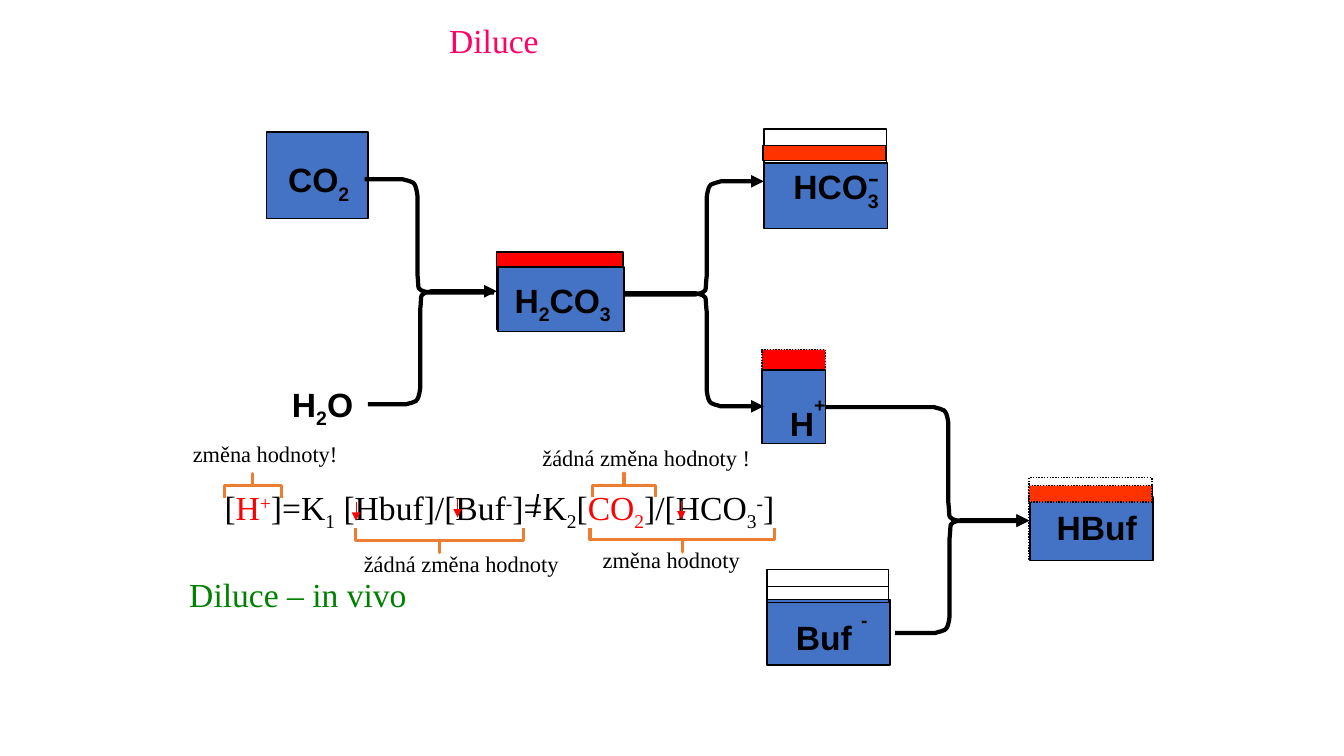
from dataclasses import dataclass

from lxml import etree
from pptx import Presentation
from pptx.dml.color import RGBColor
from pptx.enum.dml import MSO_LINE
from pptx.enum.shapes import MSO_CONNECTOR, MSO_SHAPE
from pptx.enum.text import MSO_AUTO_SIZE, PP_ALIGN
from pptx.oxml.ns import qn
from pptx.util import Cm, Pt

RECTANGLE = MSO_SHAPE.RECTANGLE
BRACE = MSO_SHAPE.RIGHT_BRACE
STRAIGHT = MSO_CONNECTOR.STRAIGHT
DOTTED = MSO_LINE.ROUND_DOT
LEFT, CENTER = PP_ALIGN.LEFT, PP_ALIGN.CENTER
SUB, SUPER, HIGH = -25, 30, 70


@dataclass(frozen=True)
class Theme:
    black: str = "000000"
    blue: str = "4472C4"
    red: str = "FF0000"
    orange: str = "FF3300"
    brace: str = "ED7D31"
    pink: str = "FF0066"
    green: str = "008000"
    label_font: str = "Arial"
    text_font: str = "Times New Roman"
    large: int = 24
    small: int = 16


THEME = Theme()

# left, top, width, height, fill, dotted
LEVELS = [
    (12.52, 6.35, 3.18, 1.96, THEME.red, False),
    (6.71, 3.33, 2.57, 2.18, THEME.blue, False),
    (25.93, 12.04, 3.1, 2.06, None, True),
    (19.2, 8.81, 1.6, 2.36, THEME.red, True),
    (19.25, 3.25, 3.1, 1.98, None, False),
    (19.2, 9.32, 1.6, 1.85, THEME.blue, False),
    (19.33, 14.35, 3.07, 2.39, None, False),
    (25.96, 12.52, 3.1, 1.6, THEME.blue, False),
    (19.33, 15.11, 3.1, 1.65, THEME.blue, False),
    (19.25, 4.11, 3.12, 1.65, THEME.blue, False),
    (12.55, 6.73, 3.18, 1.63, THEME.blue, False),
    (19.23, 3.66, 3.1, 0.38, THEME.orange, False),
    (25.93, 12.24, 3.1, 0.41, THEME.orange, True),
    (19.33, 14.78, 3.07, 0.41, None, False),
]

# junction, trunk x, far end, arrowhead element
BRANCHES = [
    ((12.45, 7.37), 10.52, (9.19, 4.52), None),
    ((12.52, 7.34), 10.59, (9.27, 10.19), "a:headEnd"),
    ((25.93, 13.13), 23.9, (20.8, 10.26), "a:headEnd"),
    ((25.93, 13.11), 23.93, (22.56, 15.95), "a:headEnd"),
    ((15.72, 7.42), 17.81, (19.25, 4.57), "a:tailEnd"),
    ((15.72, 7.39), 17.81, (19.25, 10.24), "a:tailEnd"),
]

# left, top, width, wrap, runs of (text, baseline)
SPECIES = [
    (6.99, 3.89, 2.08, False, [("CO",), ("2", SUB)]),
    (7.09, 9.55, 2.08, False, [("H",), ("2", SUB), ("O",)]),
    (12.67, 6.93, 3.02, True, [("H",), ("2", SUB), ("CO",), ("3", SUB)]),
    (19.71, 4.06, 2.72, False, [("HCO",), ("3", SUB)]),
    (19.63, 9.78, 1.45, True, [("H",), ("+", HIGH)]),
    (19.79, 15.19, 2.34, False, [("Buf ",), ("-", HIGH)]),
    (26.37, 12.65, 2.54, False, [("HBuf",)]),
]

# text, baseline, colour
FORMULA = [
    ("[",), ("H", 0, THEME.red), ("+", SUPER, THEME.red), ("]=K",), ("1", SUB),
    (" [Hbuf]/[Buf",), ("-", SUPER), ("]=K",), ("2", SUB), ("[",),
    ("CO", 0, THEME.red), ("2", SUB, THEME.red), ("]/[HCO",), ("3", SUB),
    ("-", SUPER), ("]",),
]

# left, top, width, wrap, text
NOTES = [
    (8.92, 13.74, 5.49, False, "žádná změna hodnoty"),
    (14.94, 13.64, 4.17, False, "změna hodnoty"),
    (4.47, 10.97, 5.26, True, " změna hodnoty!"),
    (13.28, 11.07, 6.25, True, " žádná změna hodnoty !"),
]

# left, top, height before rotation, rotation
BRACES = [
    (10.77, 11.51, 4.22, 90),
    (16.89, 11.28, 4.65, 90),
    (6.07, 11.53, 1.42, 270),
    (15.42, 11.43, 1.6, 270),
]

DOWN_ARROWS = [(8.97, 12.65), (11.53, 12.57), (17.17, 12.62)]


def style_line(shape, color, width, arrow=None):
    shape.line.color.rgb = RGBColor.from_string(color)
    shape.line.width = Pt(width)
    if arrow:
        line = shape.element.spPr.find(qn("a:ln"))
        etree.SubElement(line, qn(arrow)).set("type", "triangle")


def add_level(slide, left, top, width, height, fill, dotted):
    shape = slide.shapes.add_shape(RECTANGLE, Cm(left), Cm(top), Cm(width), Cm(height))
    shape.shadow.inherit = False
    if fill:
        shape.fill.solid()
        shape.fill.fore_color.rgb = RGBColor.from_string(fill)
    else:
        shape.fill.background()
    style_line(shape, THEME.black, 1)
    if dotted:
        shape.line.dash_style = DOTTED


def add_branch(slide, junction, trunk, far, arrow):
    """Draw a line from junction to far that turns into and out of a vertical trunk."""
    (x0, y0), (x1, y1) = junction, far
    side = 1 if x0 > trunk else -1
    down = 1 if y1 > y0 else -1
    points = [
        (trunk + 0.28 * side, y0),
        (trunk - 0.05 * side, y0 + 0.08 * down),
        (trunk + 0.05 * side, y0 + 0.05 * down),
        (trunk, y0 + 0.46 * down),
        (trunk, y1 - 0.41 * down),
        (trunk - 0.05 * side, y1),
        (trunk - 0.13 * side, y1 - 0.08 * down),
        (trunk - 0.36 * side, y1),
        far,
    ]
    builder = slide.shapes.build_freeform(Cm(x0), Cm(y0))
    builder.add_line_segments([(Cm(x), Cm(y)) for x, y in points], close=False)
    shape = builder.convert_to_shape()
    segments = list(shape.element.iter(qn("a:lnTo")))
    for first in (1, 5):
        curve = etree.Element(qn("a:cubicBezTo"))
        segments[first].addprevious(curve)
        for segment in segments[first:first + 3]:
            curve.append(segment[0])
            segment.getparent().remove(segment)
    shape.shadow.inherit = False
    shape.fill.background()
    style_line(shape, THEME.black, 3, arrow)


def add_line(slide, start, end, color, width, arrow=None):
    connector = slide.shapes.add_connector(STRAIGHT, *map(Cm, start + end))
    style_line(connector, color, width, arrow)
    etree.SubElement(connector.element.spPr, qn("a:effectLst"))


def add_brace(slide, left, top, height, rotation):
    shape = slide.shapes.add_shape(BRACE, Cm(left), Cm(top), Cm(0.61), Cm(height))
    shape.adjustments[0] = 0
    shape.adjustments[1] = 0.5
    shape.rotation = rotation
    shape.shadow.inherit = False
    shape.fill.background()
    style_line(shape, THEME.brace, 2.25)


def add_text(slide, left, top, width, runs, height=1.29, wrap=False, size=THEME.large,
             font=THEME.text_font, color=THEME.black, bold=False, align=LEFT):
    """Add a text box; each run is (text, baseline percent, colour), the last two optional."""
    box = slide.shapes.add_textbox(Cm(left), Cm(top), Cm(width), Cm(height))
    frame = box.text_frame
    frame.word_wrap = wrap
    frame.auto_size = MSO_AUTO_SIZE.SHAPE_TO_FIT_TEXT
    paragraph = frame.paragraphs[0]
    paragraph.alignment = align
    for text, baseline, run_color in ((*run, 0, color)[:3] if len(run) == 1
                                      else (*run, color)[:3] for run in runs):
        run = paragraph.add_run()
        run.text = text
        run.font.name = font
        run.font.size = Pt(size)
        run.font.bold = bold
        run.font.color.rgb = RGBColor.from_string(run_color)
        if baseline:
            run.font._element.set("baseline", str(baseline * 1000))


def main():
    presentation = Presentation()
    presentation.slide_width, presentation.slide_height = Cm(33.87), Cm(19.05)
    slide = presentation.slides.add_slide(presentation.slide_layouts[6])

    for level in LEVELS:
        add_level(slide, *level)
    for branch in BRANCHES:
        add_branch(slide, *branch)
    for left, top, width, wrap, runs in SPECIES:
        add_text(slide, left, top, width, runs, wrap=wrap, font=THEME.label_font,
                 bold=True, align=CENTER)
    add_text(slide, 21.62, 3.78, 0.79, [("-",)], align=CENTER)

    add_text(slide, 11.07, 0.38, 2.79, [("Diluce",)], color=THEME.pink)
    add_text(slide, 5.41, 12.14, 14.99, FORMULA)
    add_text(slide, 4.52, 14.33, 6.05, [("Diluce – in vivo",)], color=THEME.green)
    for x, y in DOWN_ARROWS:
        add_line(slide, (x, y), (x, y + 0.47), THEME.red, 0.5, "a:tailEnd")
    add_line(slide, (13.56, 12.45), (13.46, 13.03), THEME.black, 1.5)
    for left, top, width, wrap, text in NOTES:
        add_text(slide, left, top, width, [(text,)], height=0.94, wrap=wrap, size=THEME.small)
    for brace in BRACES:
        add_brace(slide, *brace)

    presentation.save("out.pptx")


if __name__ == "__main__":
    main()
